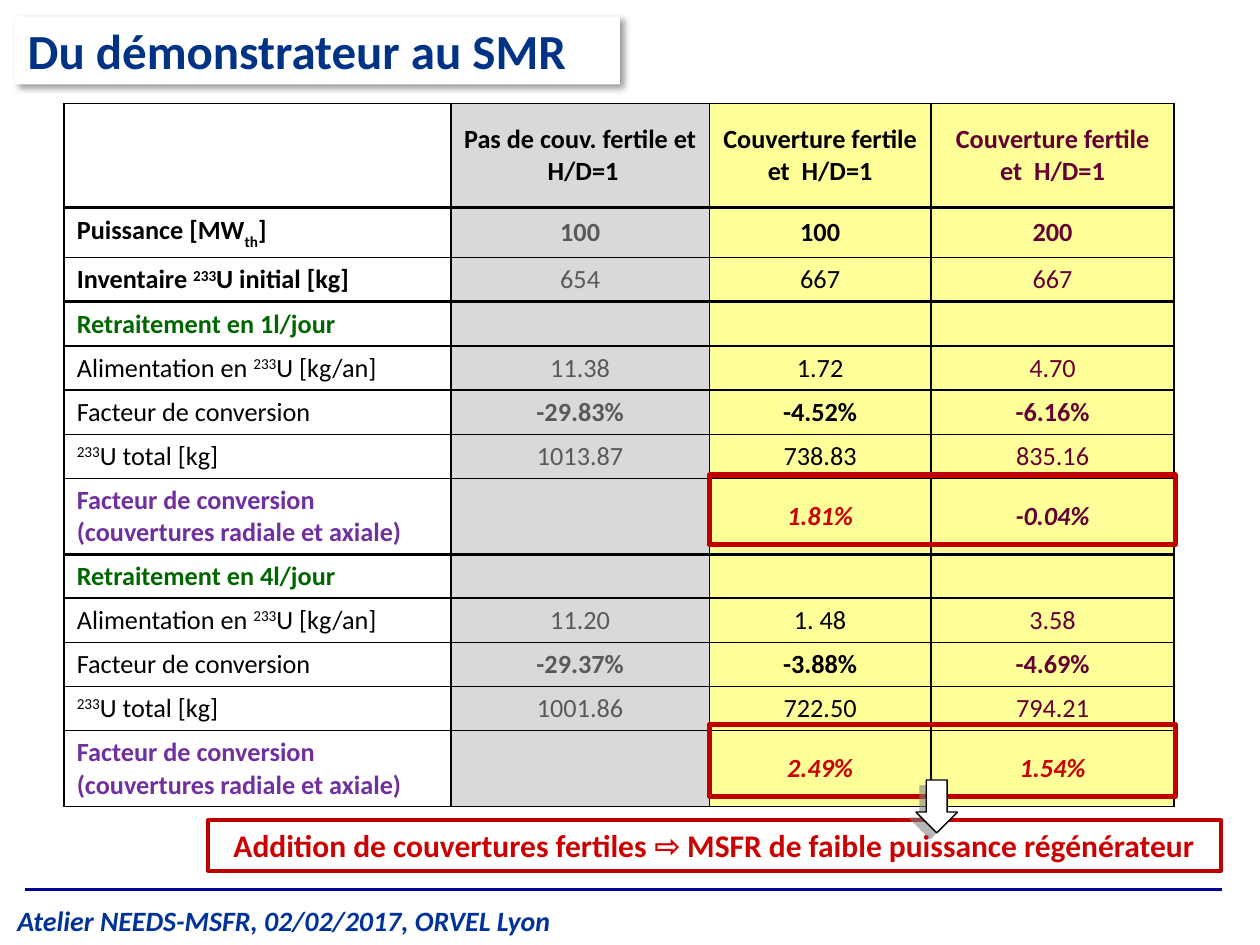
from lxml.etree import SubElement, fromstring
from pptx import Presentation
from pptx.dml.color import RGBColor
from pptx.enum.shapes import MSO_CONNECTOR as Connector, MSO_SHAPE as Shape
from pptx.enum.text import MSO_ANCHOR as Anchor, PP_ALIGN as Align
from pptx.oxml.ns import nsdecls, qn
from pptx.util import Inches, Pt

COLORS = {
    "white": "FFFFFF", "black": "000000", "grey": "D9D9D9", "yellow": "FFFF99",
    "dim": "595959", "plum": "660033", "green": "006600", "violet": "7030A0",
    "red": "CC0000", "frame": "C00000", "title": "003385", "footer": "003399",
    "rule": "000099", "shade": "808080",
}
COLUMNS = [30.7, 20.5, 17.6, 19.3]
ROWS = [8.3] + [3.4] * 6 + [5.9] + [3.4] * 4 + [4.3]
FILLS = ["white", "grey", "yellow", "yellow"]
INKS = ["black", "dim", "black", "plum"]
HEADINGS = ["", "Pas de couv. fertile et  H/D=1"] + ["Couverture fertile et  H/D=1"] * 2
POWER = ["Puissance [MW|_th|]", "100", "100", "200"]
STOCK = ["Inventaire |^233|U initial [kg]", "654", "667", "667"]
RATES = [
    ("1l/jour", ["11.38", "1.72", "4.70"], ["-29.83%", "-4.52%", "-6.16%"],
     ["1013.87", "738.83", "835.16"], ["", "1.81%", "-0.04%"]),
    ("4l/jour", ["11.20", "1. 48", "3.58"], ["-29.37%", "-3.88%", "-4.69%"],
     ["1001.86", "722.50", "794.21"], ["", "2.49%", "1.54%"]),
]
THICK_AFTER = {0, 2, 7}


def grid(*counts):
    """Turn counts of grid units, a hundredth of the slide's width, into lengths."""
    return [Inches(count / 10) for count in counts]


def rgb(name):
    """Return the named colour."""
    return RGBColor.from_string(COLORS[name])


def style(span, size, color, bold=False, italic=False):
    """Format one run of text."""
    font = span.font
    font.name, font.size, font.bold, font.italic = "Calibri", Pt(size), bold, italic
    font.color.rgb = rgb(color)


def cast_shadow(shape, color, alpha, blur, distance, angle):
    """Give a shape an outer shadow."""
    shape._element.spPr.append(fromstring(
        f'<a:effectLst {nsdecls("a")}><a:outerShdw blurRad="{Pt(blur)}" dist="{Pt(distance)}" '
        f'dir="{angle * 60000}" algn="tl" rotWithShape="0"><a:srgbClr val="{COLORS[color]}">'
        f'<a:alpha val="{alpha * 1000}"/></a:srgbClr></a:outerShdw></a:effectLst>'))


def add_outline(page, kind, box, line, width, fill=None):
    """Draw a preset shape with a border and an optional fill."""
    shape = page.shapes.add_shape(kind, *grid(*box))
    if fill:
        shape.fill.solid()
        shape.fill.fore_color.rgb = rgb(fill)
    else:
        shape.fill.background()
    shape.line.color.rgb = rgb(line)
    shape.line.width = Pt(width)
    return shape


def add_title(page, box):
    """Place the slide title on its shadowed white panel."""
    title = page.shapes.title
    title.left, title.top, title.width, title.height = grid(*box)
    title.fill.solid()
    title.fill.fore_color.rgb = rgb("white")
    cast_shadow(title, "black", 40, 4, 3, 45)
    frame = title.text_frame
    frame.text = "Du démonstrateur au SMR"
    frame.vertical_anchor = Anchor.MIDDLE
    frame.paragraphs[0].alignment = Align.LEFT
    style(frame.paragraphs[0].runs[0], 28, "title", True)


def build_rows():
    """Yield each row as its texts, inks, bold flags and italic flag."""
    yield HEADINGS, ["black", "black", "black", "plum"], [True] * 4, False
    yield POWER, INKS, [True] * 4, False
    yield STOCK, INKS, [True] + [False] * 3, False
    value_bold = [False] + [True] * 3
    for rate, feed, factor, total, blanket in RATES:
        yield [f"Retraitement en {rate}", "", "", ""], ["green"] * 4, [True] * 4, False
        yield ["Alimentation en |^233|U [kg/an]"] + feed, INKS, [False] * 4, False
        yield ["Facteur de conversion"] + factor, INKS, value_bold, False
        yield ["^233|U total [kg]"] + total, INKS, [False] * 4, False
        inks = ["violet"] + ["plum" if text.startswith("-") else "red" for text in blanket]
        yield (["Facteur de conversion (couvertures radiale et axiale)"] + blanket,
               inks, [True] * 4, True)


def set_borders(cell, top, bottom):
    """Rule the four sides of a cell."""
    props = cell._tc.get_or_add_tcPr()
    for index, (side, width) in enumerate(zip("LRTB", (1, 1, top, bottom))):
        line = SubElement(props, qn(f"a:ln{side}"), w=str(Pt(width)))
        fill = SubElement(line, qn("a:solidFill"))
        SubElement(fill, qn("a:srgbClr"), val=COLORS["black"])
        props.insert(index, line)


def write_cell(cell, text, ink, bold, italic, align):
    """Write a cell, where ^ raises and _ lowers a part between bars."""
    cell.vertical_anchor = Anchor.MIDDLE
    para = cell.text_frame.paragraphs[0]
    para.alignment = align
    if not text:
        para._p.get_or_add_endParaRPr().set("sz", "1500")
        return
    for part in text.split("|"):
        span = para.add_run()
        span.text = part.lstrip("^_")
        style(span, 15, ink, bold, italic)
        if part[0] in "^_":
            span.font._element.set("baseline", "30000" if part[0] == "^" else "-30000")


def add_results(page, left, top):
    """Build the table that compares the three reactor designs."""
    box = grid(left, top, sum(COLUMNS), sum(ROWS))
    table = page.shapes.add_table(len(ROWS), len(COLUMNS), *box).table
    table.first_row = table.horz_banding = False
    for column, width in zip(table.columns, grid(*COLUMNS)):
        column.width = width
    for row, height in zip(table.rows, grid(*ROWS)):
        row.height = height
    for r, (texts, inks, bolds, slanted) in enumerate(build_rows()):
        top_width = 2 if r - 1 in THICK_AFTER else 1
        bottom_width = 2 if r in THICK_AFTER else 1
        for c, text in enumerate(texts):
            cell = table.cell(r, c)
            cell.fill.solid()
            cell.fill.fore_color.rgb = rgb(FILLS[c])
            set_borders(cell, top_width, bottom_width)
            align = Align.CENTER if c else Align.LEFT
            write_cell(cell, text, inks[c], bolds[c], slanted and c > 0, align)


def add_conclusion(page, box):
    """Add the boxed conclusion, the result frames and the arrow above it."""
    left, top, width, height = box
    banner = add_outline(page, Shape.RECTANGLE, box, "frame", 2.25, "white")
    banner.shadow.inherit = False
    frame = banner.text_frame
    frame.text = "Addition de couvertures fertiles ⇨ MSFR de faible puissance régénérateur"
    frame.word_wrap = False
    frame.vertical_anchor = Anchor.MIDDLE
    frame.paragraphs[0].alignment = Align.CENTER
    style(frame.paragraphs[0].runs[0], 18, "red", True)
    for rise, tall in ((27.4, 5.5), (7.6, 5.7)):
        area = (left + 39.8, top - rise, 37, tall)
        add_outline(page, Shape.RECTANGLE, area, "frame", 3).shadow.inherit = False
    arrow = add_outline(page, Shape.DOWN_ARROW, (left + 56.2, top - 3.2, 3.3, 4.2),
                        "black", 0.75, "white")
    cast_shadow(arrow, "shade", 57, 0, 5, 138)


def add_footer(page, left, top, width):
    """Draw the bottom rule and the event line below it."""
    ends = grid(left + 1.6, top, left + width, top)
    rule = page.shapes.add_connector(Connector.STRAIGHT, *ends)
    rule.line.color.rgb = rgb("rule")
    rule.line.width = Pt(1.5)
    SubElement(rule._element.spPr, qn("a:effectLst"))
    frame = page.shapes.add_textbox(*grid(left, top + 0.6, 75.6, 3.7)).text_frame
    frame.word_wrap = True
    frame.text = "Atelier NEEDS-MSFR, 02/02/2017, ORVEL Lyon"
    style(frame.paragraphs[0].runs[0], 16, "footer", True, True)


def main():
    """Build the slide and save the deck."""
    deck = Presentation()
    deck.slide_width, deck.slide_height = grid(100, 75)
    page = deck.slides.add_slide(deck.slide_layouts[5])
    add_footer(page, 0.4, 70.6, 96.6)
    add_results(page, 5.1, 8.2)
    add_conclusion(page, (16.5, 65.1, 80.4, 4))
    add_title(page, (1.2, 1.3, 48, 5.4))
    deck.save("out.pptx")


if __name__ == "__main__":
    main()
